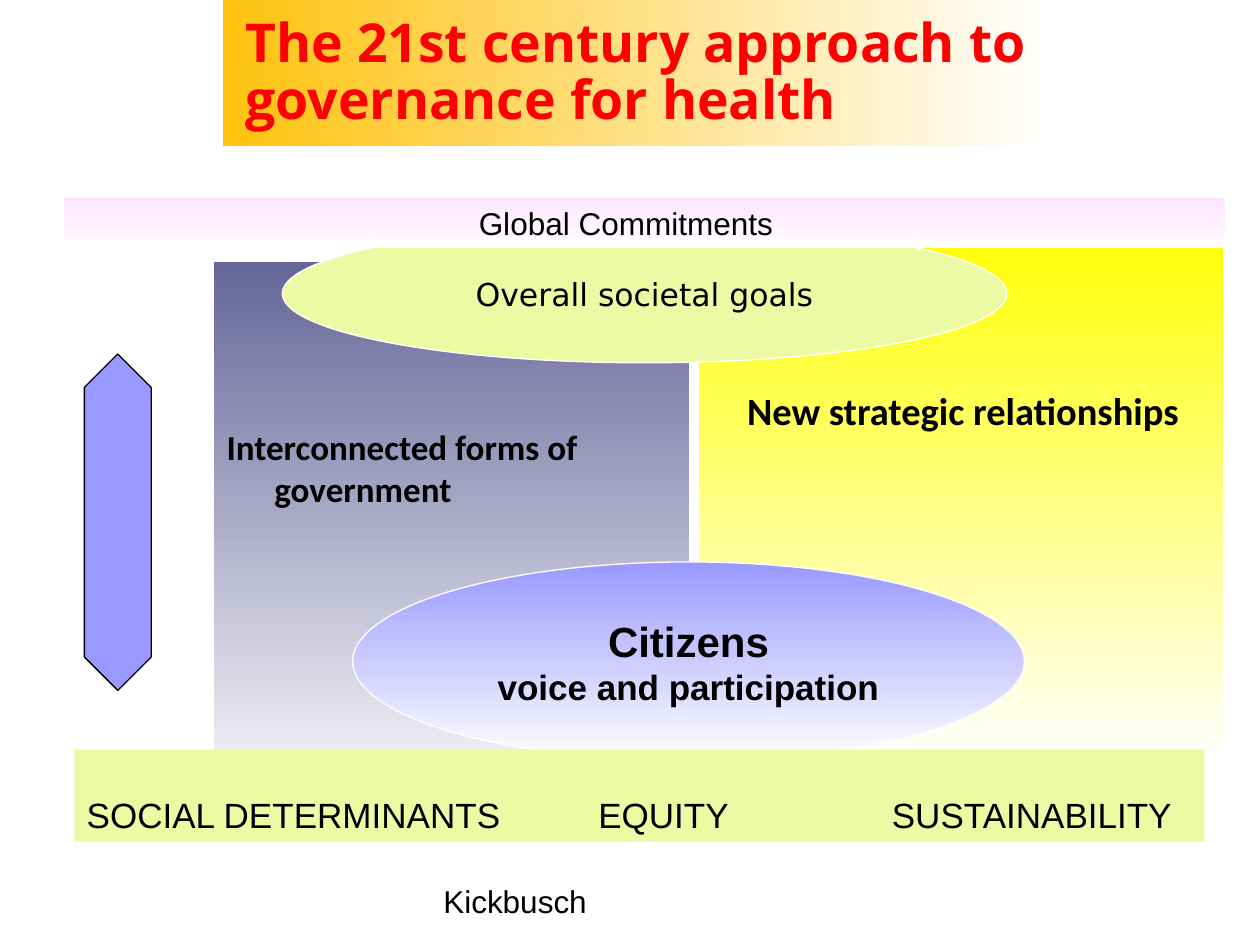
import pptx
import pptx.dml.color
import pptx.enum.shapes
import pptx.enum.text
import pptx.oxml
import pptx.oxml.ns
import pptx.util

Inches = pptx.util.Inches
Pt = pptx.util.Pt
SHAPE = pptx.enum.shapes.MSO_SHAPE
ALIGN = pptx.enum.text.PP_ALIGN
ANCHOR = pptx.enum.text.MSO_ANCHOR


def color(value):
    return pptx.dml.color.RGBColor.from_string(value)


def add_block(s, kind, box, fill, fade_angle=None, line=None):
    """Add a solid shape, or one fading to white when an angle is given."""
    sp = s.shapes.add_shape(kind, *map(Inches, box))
    sp.shadow.inherit = False
    if fade_angle is None:
        sp.fill.solid()
        sp.fill.fore_color.rgb = color(fill)
    else:
        sp.fill.gradient()
        sp.fill.gradient_angle = fade_angle
        for stop, value in zip(sp.fill.gradient_stops, (fill, "FFFFFF")):
            stop.color.rgb = color(value)
    if line:
        sp.line.color.rgb = color(line)
        sp.line.width = Pt(0.75)
    else:
        sp.line.fill.background()
    return sp


def set_frame(sp, left=0.1, top=0.05, anchor=ANCHOR.TOP, wrap=True):
    tf = sp.text_frame
    tf.word_wrap = wrap
    tf.vertical_anchor = anchor
    tf.margin_left, tf.margin_top = Inches(left), Inches(top)
    return tf


def add_run(p, text, size, font="Arial", bold=False, fill="000000"):
    r = p.add_run()
    r.text = text
    r.font.size = Pt(size)
    r.font.name = font
    r.font.bold = bold
    r.font.color.rgb = color(fill)


def first_paragraph(tf, align=ALIGN.LEFT):
    p = tf.paragraphs[0]
    p.alignment = align
    return p


def set_tabs(p, stops):
    tabs = pptx.oxml.parse_xml(
        "<a:tabLst %s/>" % pptx.oxml.ns.nsdecls("a"))
    for stop in stops:
        tab = tabs.makeelement(pptx.oxml.ns.qn("a:tab"),
                               {"pos": str(Inches(stop)), "algn": "l"})
        tabs.append(tab)
    p._p.get_or_add_pPr().append(tabs)


def add_header(s):
    add_block(s, SHAPE.RECTANGLE, (1.77, 0, 6.56, 1.16), "FEC20F", 0)
    box = s.shapes.add_textbox(*map(Inches, (1.85, 0.14, 7.88, 0.89)))
    p = first_paragraph(set_frame(box, anchor=ANCHOR.MIDDLE))
    p.line_spacing = 0.88
    style = (30.6, "Open Sans", True, "FF0000")
    add_run(p, "The 21st century approach to", *style)
    p.add_line_break()
    add_run(p, "governance for health", *style)


def add_panels(s):
    # Government on the left, with a hanging indent
    sp = add_block(s, SHAPE.RECTANGLE, (1.7, 2.08, 3.77, 4.46), "666699", 270)
    p = first_paragraph(set_frame(sp, top=1.3))
    pPr = p._p.get_or_add_pPr()
    pPr.set("marL", str(Inches(0.38)))
    pPr.set("indent", str(Inches(-0.38)))
    add_run(p, "Interconnected forms of government", 20, "Calibri", True)

    # Relationships on the right
    sp = add_block(s, SHAPE.RECTANGLE, (5.55, 1.78, 4.16, 4.3), "FFFF00", 270)
    p = first_paragraph(set_frame(sp, left=0.38, top=1.29))
    add_run(p, "New strategic relationships", 22, "Calibri", True)


def add_citizens(s):
    sp = add_block(s, SHAPE.OVAL, (2.8, 4.46, 5.33, 1.58), "9999FF", 270,
                   "FFFFFF")
    tf = set_frame(sp, anchor=ANCHOR.MIDDLE, wrap=False)
    add_run(first_paragraph(tf, ALIGN.CENTER), "Citizens", 24, bold=True)
    p = tf.add_paragraph()
    p.alignment = ALIGN.CENTER
    add_run(p, "voice and participation", 20, bold=True)


def add_foundation(s):
    sp = add_block(s, SHAPE.RECTANGLE, (0.59, 5.95, 8.97, 0.73), "ECFAA4")
    p = first_paragraph(set_frame(sp, anchor=ANCHOR.BOTTOM))
    set_tabs(p, (4.06, 6.39))
    add_run(p, "SOCIAL DETERMINANTS\tEQUITY\tSUSTAINABILITY", 20)


def add_goals(s):
    sp = add_block(s, SHAPE.OVAL, (2.24, 1.78, 5.75, 1.1), "ECFAA4",
                   line="FFFFFF")
    tf = set_frame(sp, anchor=ANCHOR.MIDDLE, wrap=False)
    add_run(first_paragraph(tf, ALIGN.CENTER), "Overall societal goals", 18,
            "DejaVu Sans")

    # Commitments band overlaps the top of the goals
    sp = add_block(s, SHAPE.RECTANGLE, (0.51, 1.57, 9.21, 0.4), "FFE5FD", 270)
    p = first_paragraph(set_frame(sp, left=3.29))
    add_run(p, "Global Commitments", 18)


def add_arrow(s):
    sp = add_block(s, SHAPE.UP_DOWN_ARROW, (0.67, 2.81, 0.53, 2.67), "9999FF",
                   line="000000")
    sp.adjustments[0] = 0.5
    sp.adjustments[1] = 1


def add_credit(s):
    box = s.shapes.add_textbox(*map(Inches, (3.42, 6.95, 3.17, 0.4)))
    add_run(first_paragraph(set_frame(box)), "Kickbusch", 18)


def main():
    prs = pptx.Presentation()
    prs.slide_width, prs.slide_height = Inches(10), Inches(7.5)
    s = prs.slides.add_slide(prs.slide_layouts[6])
    # From back to front
    add_header(s)
    add_credit(s)
    add_panels(s)
    add_citizens(s)
    add_foundation(s)
    add_goals(s)
    add_arrow(s)
    prs.save("out.pptx")


if __name__ == "__main__":
    main()
